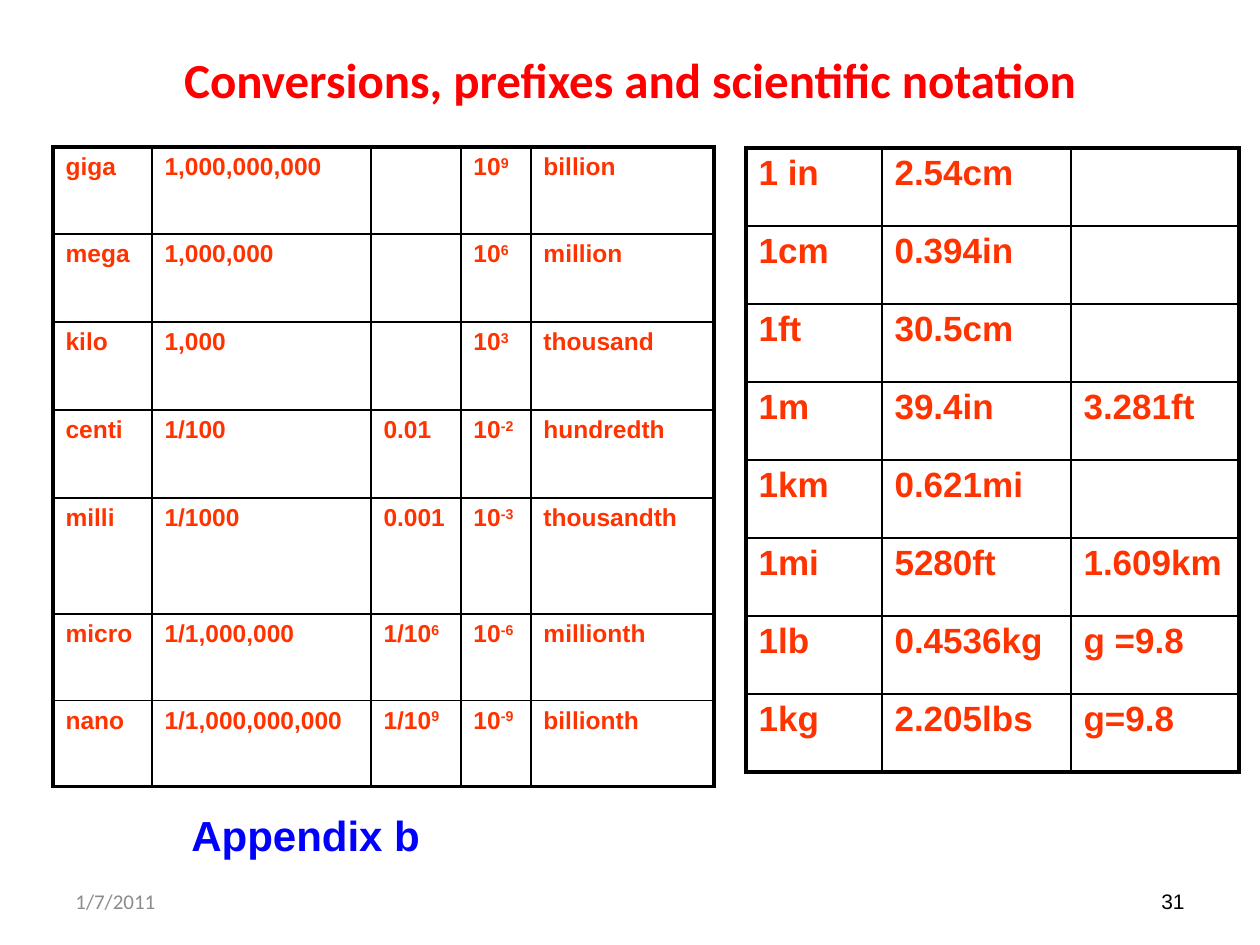
from lxml.etree import SubElement
from pptx import Presentation
from pptx.dml.color import RGBColor
from pptx.enum.text import MSO_ANCHOR, PP_ALIGN
from pptx.oxml.ns import qn
from pptx.util import Emu, Pt

PX_PER_INCH = 126
BLACK = RGBColor(0x00, 0x00, 0x00)
RED = RGBColor(0xFF, 0x00, 0x00)
ORANGE = RGBColor(0xFF, 0x33, 0x00)
BLUE = RGBColor(0x00, 0x00, 0xFF)
GREY = RGBColor(0x8C, 0x8C, 0x8C)
INNER_LINE, OUTER_LINE = Pt(1), Pt(2.25)

# "^" starts a superscript
PREFIXES = [
    ("giga", "1,000,000,000", "", "10^9", "billion"),
    ("mega", "1,000,000", "", "10^6", "million"),
    ("kilo", "1,000", "", "10^3", "thousand"),
    ("centi", "1/100", "0.01", "10^-2", "hundredth"),
    ("milli", "1/1000", "0.001", "10^-3", "thousandth"),
    ("micro", "1/1,000,000", "1/10^6", "10^-6", "millionth"),
    ("nano", "1/1,000,000,000", "1/10^9", "10^-9", "billionth"),
]
CONVERSIONS = [
    ("1 in", "2.54cm", ""),
    ("1cm", "0.394in", ""),
    ("1ft", "30.5cm", ""),
    ("1m", "39.4in", "3.281ft"),
    ("1km", "0.621mi", ""),
    ("1mi", "5280ft", "1.609km"),
    ("1lb", "0.4536kg", "g =9.8"),
    ("1kg", "2.205lbs", "g=9.8"),
]


def px(length):
    return Emu(round(length * 914400 / PX_PER_INCH))


def write(frame, text, size, color, font="Arial", bold=False, align=PP_ALIGN.LEFT):
    """Write one paragraph, raising whatever follows a caret."""
    paragraph = frame.paragraphs[0]
    paragraph.alignment = align
    for position, part in enumerate(text.split("^")):
        if not part:
            continue
        run = paragraph.add_run()
        run.text = part
        run.font.size = Pt(size)
        run.font.name = font
        run.font.bold = bold
        run.font.color.rgb = color
        if position:
            run.font._element.set("baseline", "30000")


def add_label(slide, box, text, anchor=MSO_ANCHOR.MIDDLE, **text_format):
    frame = slide.shapes.add_textbox(*map(px, box)).text_frame
    frame.word_wrap = True
    frame.vertical_anchor = anchor
    write(frame, text, **text_format)


def draw_borders(cell, outer_sides):
    properties = cell._tc.get_or_add_tcPr()
    for side in "LRTB":
        width = OUTER_LINE if side in outer_sides else INNER_LINE
        line = SubElement(properties, qn(f"a:ln{side}"), w=str(width))
        fill = SubElement(line, qn("a:solidFill"))
        SubElement(fill, qn("a:srgbClr"), val=str(BLACK))


def add_grid(slide, left, top, widths, heights, rows, size):
    box = map(px, (left, top, sum(widths), sum(heights)))
    table = slide.shapes.add_table(len(rows), len(widths), *box).table
    table.first_row = table.horz_banding = False
    for column, width in zip(table.columns, widths):
        column.width = px(width)
    for row, height in zip(table.rows, heights):
        row.height = px(height)
    for r, row in enumerate(rows):
        for c, text in enumerate(row):
            cell = table.cell(r, c)
            edges = {"L": c == 0, "R": c == len(row) - 1,
                     "T": r == 0, "B": r == len(rows) - 1}
            draw_borders(cell, [side for side, outer in edges.items() if outer])
            cell.fill.background()
            write(cell.text_frame, text, size=size, color=ORANGE, bold=True)


def add_footer(slide, left, top, width, height):
    label_width = 294
    add_label(slide, (left, top, label_width, height), "1/7/2011",
              size=12, color=GREY, font="Calibri")
    add_label(slide, (left + width - label_width, top, label_width, height), "31",
              size=12, color=BLACK, align=PP_ALIGN.RIGHT)


def main():
    deck = Presentation()
    deck.slide_width, deck.slide_height = px(1260), px(945)
    slide = deck.slides.add_slide(deck.slide_layouts[6])

    # Title
    add_label(slide, (63, 0, 1134, 158), "Conversions, prefixes and scientific notation",
              size=28, color=RED, font="Calibri", bold=True, align=PP_ALIGN.CENTER)

    # Prefixes on the left, unit conversions on the right
    add_grid(slide, 53, 147, (99, 219, 90, 70, 183),
             (87, 88, 88, 88, 116, 87, 86), PREFIXES, size=14)
    add_grid(slide, 746, 148, (136, 189, 168),
             [78] * len(CONVERSIONS), CONVERSIONS, size=20)

    # Reference and footer
    add_label(slide, (179, 803, 265, 63), "Appendix b",
              anchor=MSO_ANCHOR.TOP, size=24, color=BLUE, bold=True)
    add_footer(slide, 63, 876, 1134, 50)
    deck.save("out.pptx")


if __name__ == "__main__":
    main()
